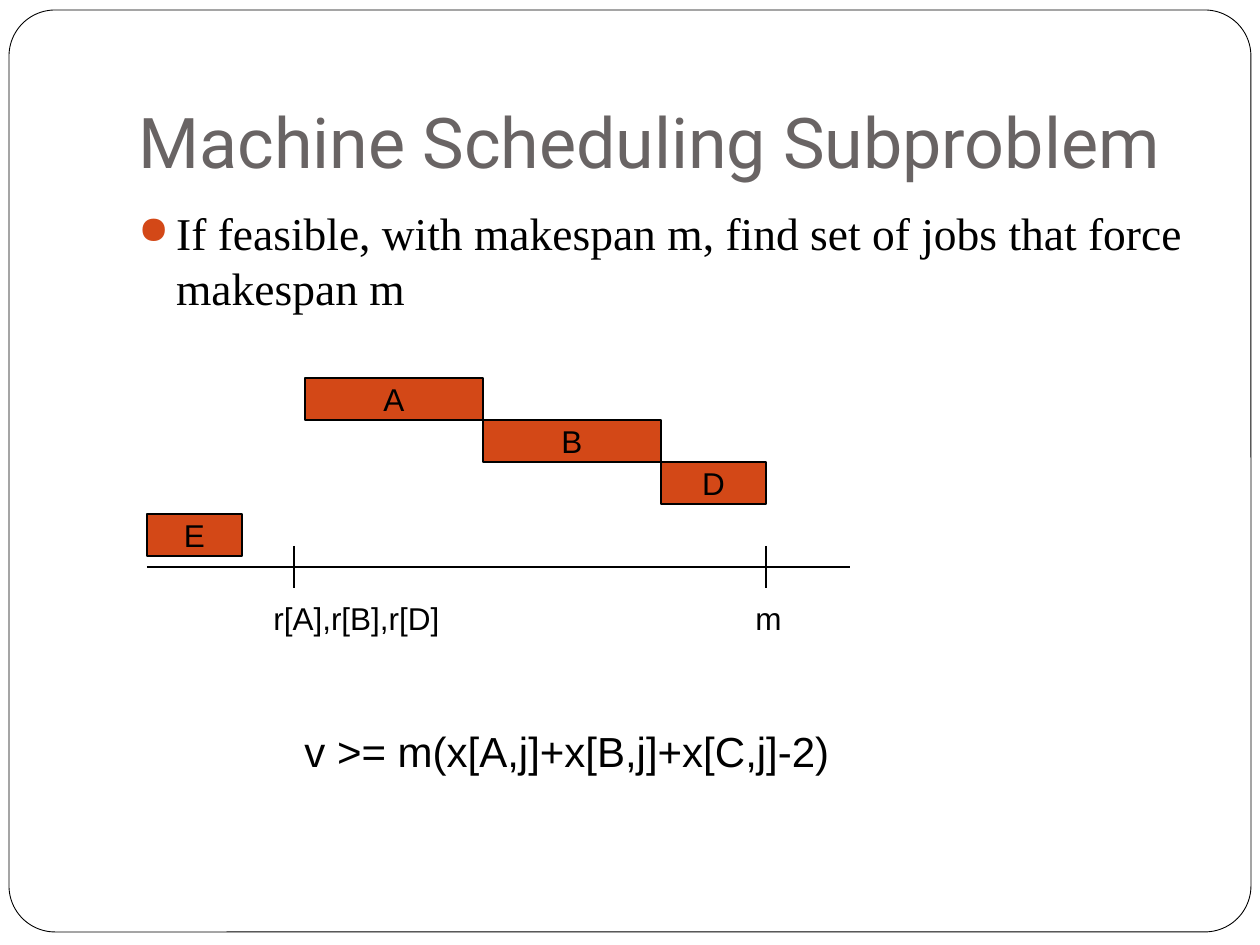
import pptx
import pptx.dml.color
import pptx.enum.shapes
import pptx.enum.text
import pptx.oxml
import pptx.oxml.ns
import pptx.util

EMU_PER_PX = 914400 / 126
BLACK = pptx.dml.color.RGBColor(0x00, 0x00, 0x00)
WHITE = pptx.dml.color.RGBColor(0xFF, 0xFF, 0xFF)
GREY = pptx.dml.color.RGBColor(0x69, 0x64, 0x64)
ORANGE = pptx.dml.color.RGBColor(0xD3, 0x48, 0x17)

TITLE_FORMAT = {"name": "Roboto", "size": pptx.util.Pt(40)}
BODY_FORMAT = {"name": "Times New Roman", "size": pptx.util.Pt(26)}
LABEL_FORMAT = {"name": "Arial", "size": pptx.util.Pt(18)}
FORMULA_FORMAT = {"name": "Arial", "size": pptx.util.Pt(24)}

ANCHOR = pptx.enum.text.MSO_ANCHOR
SHAPE = pptx.enum.shapes.MSO_SHAPE


def px(*lengths):
    return [pptx.util.Emu(round(length * EMU_PER_PX)) for length in lengths]


def write_text(shape, text, font_format, color=BLACK, wrap=True, anchor=ANCHOR.TOP):
    frame = shape.text_frame
    frame.word_wrap = wrap
    frame.vertical_anchor = anchor
    paragraph = frame.paragraphs[0]
    run = paragraph.add_run()
    run.text = text
    for name, value in font_format.items():
        setattr(run.font, name, value)
    run.font.color.rgb = color
    return paragraph


def add_text(slide, box, text, font_format, **options):
    return write_text(slide.shapes.add_textbox(*px(*box)), text, font_format, **options)


def add_box(slide, kind, box, fill, line_width):
    shape = slide.shapes.add_shape(kind, *px(*box))
    shape.shadow.inherit = False
    shape.fill.solid()
    shape.fill.fore_color.rgb = fill
    shape.line.color.rgb = BLACK
    shape.line.width = pptx.util.Pt(line_width)
    return shape


def add_line(slide, x1, y1, x2, y2):
    line = slide.shapes.add_connector(
        pptx.enum.shapes.MSO_CONNECTOR.STRAIGHT, *px(x1, y1, x2, y2))
    line.line.color.rgb = BLACK
    line.line.width = pptx.util.Pt(0.75)
    line._element.spPr.append(pptx.oxml.parse_xml(
        f"<a:effectLst {pptx.oxml.ns.nsdecls('a')}/>"))


def add_frame(slide, box):
    frame = add_box(slide, SHAPE.ROUNDED_RECTANGLE, box, WHITE, 0.5)
    frame.adjustments[0] = 0.05


def add_title(slide, box):
    title = slide.shapes.add_textbox(*px(*box))
    title.text_frame.margin_bottom = pptx.util.Inches(0.1)
    write_text(title, "Machine Scheduling Subproblem", TITLE_FORMAT,
               color=GREY, anchor=ANCHOR.BOTTOM)


def add_bullet(slide, box):
    paragraph = add_text(
        slide, box,
        "If feasible, with makespan m, find set of jobs that force makespan m",
        BODY_FORMAT)
    paragraph.space_before = pptx.util.Pt(5.8)
    properties = paragraph._p.get_or_add_pPr()
    indent = pptx.util.Inches(0.3)
    properties.set("marL", str(indent))
    properties.set("indent", str(-indent))
    namespace = pptx.oxml.ns.nsdecls("a")
    for bullet_part in (
        f'<a:buClr {namespace}><a:srgbClr val="{ORANGE}"/></a:buClr>',
        f'<a:buSzPct {namespace} val="85000"/>',
        f'<a:buChar {namespace} char="●"/>',
    ):
        properties.append(pptx.oxml.parse_xml(bullet_part))


def add_job(slide, box, name):
    job = add_box(slide, SHAPE.RECTANGLE, box, ORANGE, 0.75)
    paragraph = write_text(job, name, LABEL_FORMAT, wrap=False, anchor=ANCHOR.MIDDLE)
    paragraph.alignment = pptx.enum.text.PP_ALIGN.CENTER


def add_schedule(slide, box):
    left, top, width, height = box
    job_height = 42

    # Time axis
    axis_y = top + height - job_height // 2
    add_line(slide, left, axis_y, left + width, axis_y)

    # Consecutive jobs, each starting where the one before ends
    start = left + 158
    for row, (name, length) in enumerate([("A", 178), ("B", 178), ("D", 105)]):
        add_job(slide, (start, top + row * job_height, length, job_height), name)
        start += length
    makespan = start

    # Job before the release time
    add_job(slide, (left, axis_y - 53, 95, job_height), "E")

    # Ticks and their labels
    for tick, text, label_left, label_width in [
        (left + 147, "r[A],r[B],r[D]", left + 114, 192),
        (makespan, "m", makespan - 23, 52),
    ]:
        add_line(slide, tick, top + height - job_height, tick, top + height)
        add_text(slide, (label_left, top + height + 5, label_width, 50), text,
                 LABEL_FORMAT, wrap=False)


def add_formula(slide, box):
    add_text(slide, box, "v >= m(x[A,j]+x[B,j]+x[C,j]-2)", FORMULA_FORMAT, wrap=False)


def main():
    presentation = pptx.Presentation()
    presentation.slide_width, presentation.slide_height = px(1260, 945)
    slide = presentation.slides.add_slide(presentation.slide_layouts[6])
    add_frame(slide, (9, 10, 1242, 922))
    add_title(slide, (126, 38, 1071, 157))
    add_bullet(slide, (126, 199, 1071, 630))
    add_schedule(slide, (147, 378, 703, 210))
    add_formula(slide, (292, 719, 550, 63))
    presentation.save("out.pptx")


if __name__ == "__main__":
    main()
